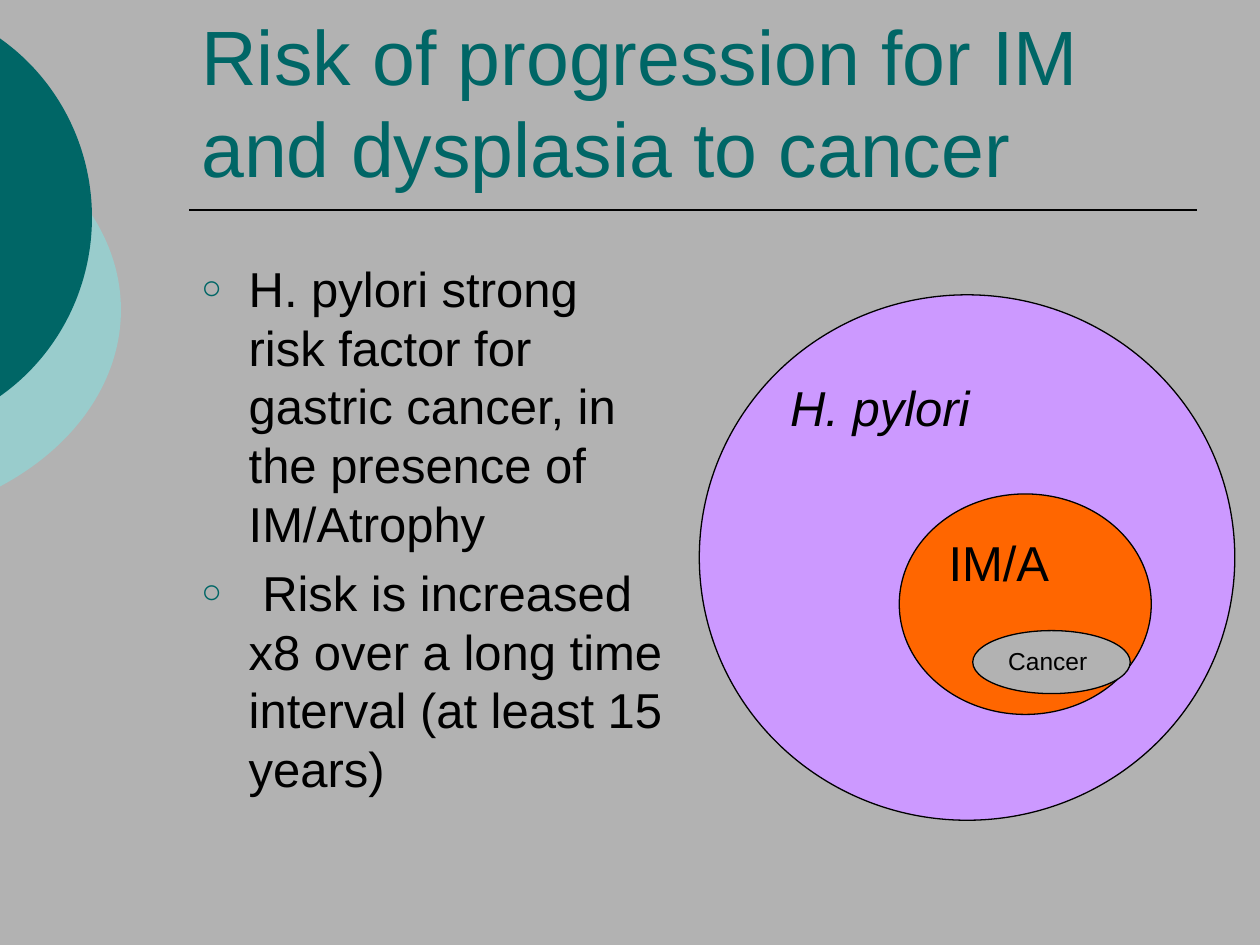
from dataclasses import dataclass
from typing import Optional

from lxml.etree import SubElement
from pptx import Presentation
from pptx.dml.color import RGBColor as Rgb
from pptx.enum.shapes import MSO_CONNECTOR as Conn, MSO_SHAPE as Kind
from pptx.enum.text import MSO_ANCHOR as Anchor, PP_ALIGN as Align
from pptx.oxml.ns import qn
from pptx.util import Emu, Inches, Pt


@dataclass(frozen=True)
class Theme:
    font: str = "Arial"
    back: str = "B2B2B2"
    ink: str = "000000"
    teal: str = "006666"
    pale: str = "99CCCC"
    lilac: str = "CC99FF"
    orange: str = "FF6600"
    head: int = 44
    body: int = 28
    small: int = 14
    rule: float = 1
    edge: float = 0.75


@dataclass(frozen=True)
class Box:
    col: float
    row: float
    cols: float
    rows: float

    def place(self) -> tuple:
        return cell(self.col), cell(self.row), cell(self.cols), cell(self.rows)


@dataclass(frozen=True)
class Disc:
    box: Box
    fill: str
    edge: Optional[str] = None


@dataclass(frozen=True)
class Ring:
    disc: Disc
    label: str
    size: int
    slant: bool = False


look = Theme()
COLS, ROWS = 40, 30
UNIT = Inches(10) // COLS

TITLE = "Risk of progression for IM and dysplasia to cancer"
POINTS = [
    "H. pylori strong risk factor for gastric cancer, in the presence of IM/Atrophy",
    " Risk is increased x8 over a long time interval (at least 15 years)",
]
DISCS = [
    Disc(Box(-14.16, 3, 18, 13.68), look.pale),
    Disc(Box(-10.6, 0, 13.52, 13.8), look.teal),
]
RINGS = [
    Ring(Disc(Box(22.2, 9.36, 17, 16.68), look.lilac, look.ink),
         "H. pylori", look.body, True),
    Ring(Disc(Box(28.55, 15.68, 8, 7), look.orange, look.ink), "IM/A", look.body),
    Ring(Disc(Box(30.88, 20.02, 5, 2), look.back, look.ink), "Cancer", look.small),
]


def cell(count: float) -> Emu:
    return Emu(round(count * UNIT))


def tint(code: str) -> Rgb:
    return Rgb.from_string(code)


def style(para, size: int, code: str, slant: bool = False) -> None:
    para.alignment = Align.LEFT
    for run in para.runs:
        font = run.font
        font.name, font.size, font.italic = look.font, Pt(size), slant
        font.color.rgb = tint(code)


def draw_disc(slide, disc: Disc):
    shape = slide.shapes.add_shape(Kind.OVAL, *disc.box.place())
    shape.shadow.inherit = False
    shape.fill.solid()
    shape.fill.fore_color.rgb = tint(disc.fill)
    if disc.edge:
        shape.line.color.rgb = tint(disc.edge)
        shape.line.width = Pt(look.edge)
    else:
        shape.line.fill.background()
    return shape


def draw_rule(slide, col: float, row: float, end: float) -> None:
    line = slide.shapes.add_connector(
        Conn.STRAIGHT, cell(col), cell(row), cell(end), cell(row))
    line.line.color.rgb = tint(look.ink)
    line.line.width = Pt(look.rule)
    SubElement(line._element.spPr, qn("a:effectLst"))


def draw_ring(slide, ring: Ring) -> None:
    frame = draw_disc(slide, ring.disc).text_frame
    frame.text = ring.label
    frame.word_wrap = True
    frame.vertical_anchor = Anchor.TOP
    style(frame.paragraphs[0], ring.size, look.ink, ring.slant)


def add_text(slide, box: Box, text: str, size: int, code: str, anchor: Anchor):
    frame = slide.shapes.add_textbox(*box.place()).text_frame
    frame.text = text
    frame.word_wrap = True
    frame.vertical_anchor = anchor
    for para in frame.paragraphs:
        style(para, size, code)
    return frame


def add_bullet(para) -> None:
    para.space_before = Pt(look.body * 0.2)
    props = para._p.get_or_add_pPr()
    hang = Inches(0.375)
    props.set("marL", str(hang))
    props.set("indent", str(-hang))
    SubElement(SubElement(props, qn("a:buClr")), qn("a:srgbClr"), val=look.teal)
    SubElement(props, qn("a:buSzPct"), val="70000")
    SubElement(props, qn("a:buFont"), typeface=look.font)
    SubElement(props, qn("a:buChar"), char="○")


def main() -> None:
    deck = Presentation()
    deck.slide_width, deck.slide_height = cell(COLS), cell(ROWS)
    slide = deck.slides.add_slide(deck.slide_layouts[6])
    slide.background.fill.solid()
    slide.background.fill.fore_color.rgb = tint(look.back)
    for disc in DISCS:
        draw_disc(slide, disc)
    draw_rule(slide, 6, 6.67, 38)
    for ring in RINGS:
        draw_ring(slide, ring)
    body = add_text(slide, Box(6, 8, 15.5, 18.36), "\n".join(POINTS),
                    look.body, look.ink, Anchor.TOP)
    for para in body.paragraphs:
        add_bullet(para)
    add_text(slide, Box(6, 1.32, 32, 5), TITLE, look.head, look.teal, Anchor.BOTTOM)
    deck.save("out.pptx")


if __name__ == "__main__":
    main()
